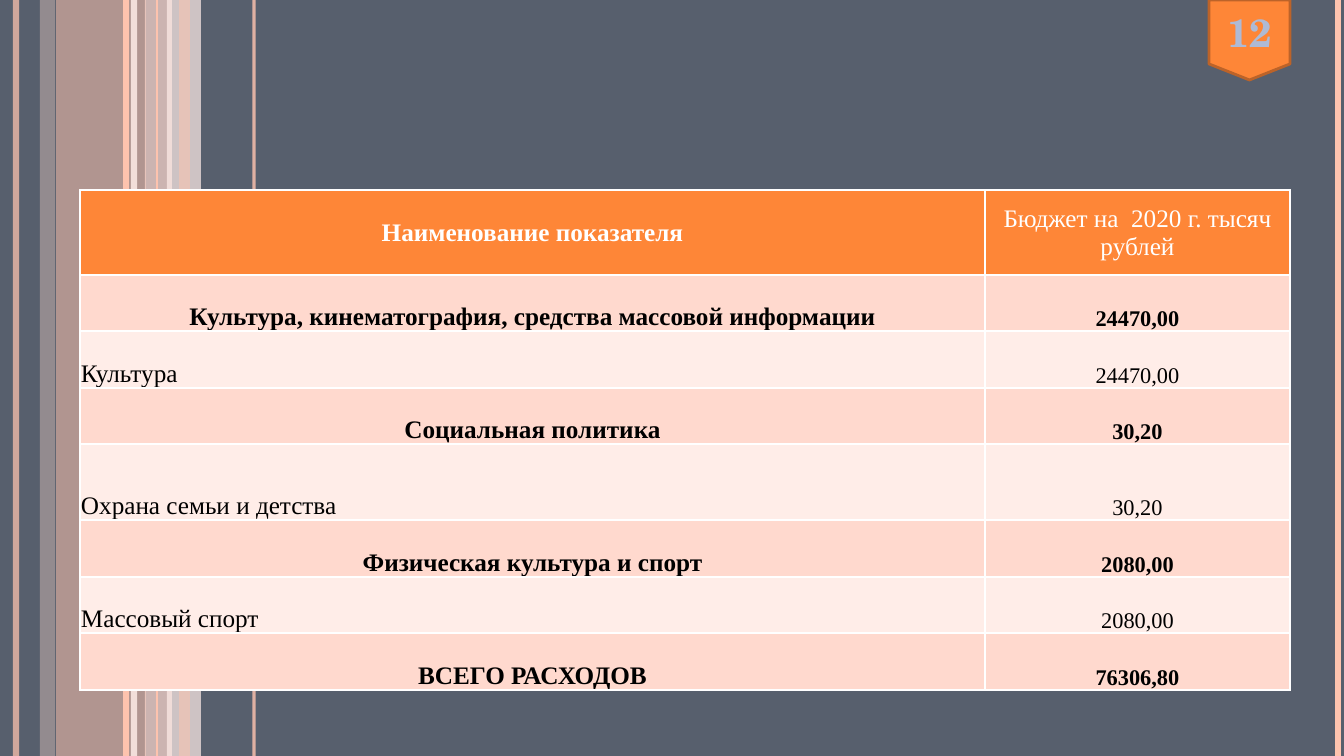
import pptx
import pptx.util
import pptx.dml.color
import pptx.enum.shapes
import pptx.enum.text
import pptx.oxml
import pptx.oxml.ns

# Content: lengths in px, line widths in points, opacity in percent
W, H = 1344, 756
EMU_PER_PX = 914400 / 100.8
BACKGROUND, ORANGE, PINK, PALE = "575F6D", "FE8637", "FFD9CE", "FFEDE8"
STRIPE = "FEC3AE"
SERIF = "Times New Roman"

# kind, x, width, colour, opacity; from back to front
STRIPES = [
    ("bar", 56, 90, STRIPE, 54),
    ("bar", 40, 15, PINK, 36),
    ("bar", 145, 27, PINK, 70),
    ("bar", 167, 34, PALE, 71),
    ("line", 16, 4.5, STRIPE, 73),
    ("line", 134, 4.5, PALE, 83),
    ("line", 126, 4.5, STRIPE, 100),
    ("line", 254, 2.25, STRIPE, 82),
    ("line", 157, 0.75, STRIPE, 100),
    ("bar", 179, 11, STRIPE, 51),
    ("line", 1338, 4.5, STRIPE, 100),
]
PAGE_NUMBER = "12"
HEADER = ("Наименование показателя", "Бюджет на  2020 г. тысяч рублей")
HEADER_HEIGHT = 85
# name, amount, is a section total, row height
BUDGET = [
    ("Культура, кинематография, средства массовой информации", "24470,00", True, 56),
    ("Культура", "24470,00", False, 57),
    ("Социальная политика", "30,20", True, 56),
    ("Охрана семьи и детства", "30,20", False, 76),
    ("Физическая культура и спорт", "2080,00", True, 57),
    ("Массовый спорт", "2080,00", False, 56),
    ("ВСЕГО РАСХОДОВ", "76306,80", True, 57),
]
TABLE_X, TABLE_Y = 80, 190
COLUMNS = (905, 305)

ALIGN = pptx.enum.text.PP_ALIGN
ANCHOR = pptx.enum.text.MSO_ANCHOR
SHAPE = pptx.enum.shapes.MSO_SHAPE


def px(n):
    return pptx.util.Emu(round(n * EMU_PER_PX))


def rgb(color):
    return pptx.dml.color.RGBColor.from_string(color)


def paint(fill, color):
    fill.solid()
    fill.fore_color.rgb = rgb(color)


def set_opacity(sp, percent):
    color = sp._element.spPr.find(".//" + pptx.oxml.ns.qn("a:srgbClr"))
    color.append(pptx.oxml.parse_xml(
        f'<a:alpha {pptx.oxml.ns.nsdecls("a")} val="{percent * 1000}"/>'))


def format_text(tf, size, color, bold, align, font=SERIF):
    p = tf.paragraphs[0]
    p.alignment = align
    f = p.runs[0].font
    f.name, f.size, f.bold = font, pptx.util.Pt(size), bold
    f.color.rgb = rgb(color)


def add_borders(cell):
    tcPr = cell._tc.get_or_add_tcPr()
    for i, side in enumerate(("lnL", "lnR", "lnT", "lnB")):
        tcPr.insert(i, pptx.oxml.parse_xml(
            f'<a:{side} {pptx.oxml.ns.nsdecls("a")} w="12700"><a:solidFill>'
            f'<a:srgbClr val="FFFFFF"/></a:solidFill></a:{side}>'))


def fill_cell(cell, text, fill, size, color, bold, align, anchor, tight=True):
    cell.text_frame.text = text
    format_text(cell.text_frame, size, color, bold, align)
    cell.vertical_anchor = anchor
    if tight:
        cell.margin_left = cell.margin_right = cell.margin_top = px(1)
        cell.margin_bottom = 0
    paint(cell.fill, fill)
    add_borders(cell)


prs = pptx.Presentation()
prs.slide_width, prs.slide_height = px(W), px(H)
slide = prs.slides.add_slide(prs.slide_layouts[6])
paint(slide.background.fill, BACKGROUND)

# Vertical stripes
for kind, x, width, color, opacity in STRIPES:
    if kind == "bar":
        sp = slide.shapes.add_shape(SHAPE.RECTANGLE, px(x), 0, px(width), px(H))
        sp.shadow.inherit = False
        paint(sp.fill, color)
        sp.line.fill.background()
    else:
        sp = slide.shapes.add_connector(
            pptx.enum.shapes.MSO_CONNECTOR.STRAIGHT, px(x), 0, px(x), px(H))
        sp.line.width = pptx.util.Pt(width)
        sp.line.color.rgb = rgb(color)
        sp._element.spPr.append(pptx.oxml.parse_xml(
            f'<a:effectLst {pptx.oxml.ns.nsdecls("a")}/>'))
    if opacity < 100:
        set_opacity(sp, opacity)

# Page number tag
tag = slide.shapes.add_shape(
    SHAPE.FLOWCHART_OFFPAGE_CONNECTOR, px(1209), 0, px(81), px(80))
tag.shadow.inherit = False
paint(tag.fill, ORANGE)
tag.line.color.rgb = rgb("BC6329")
tag.line.width = pptx.util.Pt(2)
tag.text_frame.text = PAGE_NUMBER
tag.text_frame.vertical_anchor = ANCHOR.MIDDLE
format_text(tag.text_frame, 28, "AEBAD5", True, ALIGN.CENTER, "TeX Gyre Schola")

# Budget table
heights = [HEADER_HEIGHT] + [row[3] for row in BUDGET]
table = slide.shapes.add_table(
    len(heights), len(COLUMNS), px(TABLE_X), px(TABLE_Y),
    px(sum(COLUMNS)), px(sum(heights))).table
for column, width in zip(table.columns, COLUMNS):
    column.width = px(width)
for row, height in zip(table.rows, heights):
    row.height = px(height)

for c, text in enumerate(HEADER):
    fill_cell(table.cell(0, c), text, ORANGE, 18, "FFFFFF", c == 0,
              ALIGN.CENTER, ANCHOR.MIDDLE, tight=c == 1)
for r, (name, amount, total, _) in enumerate(BUDGET, 1):
    fill = PINK if total else PALE
    name_align = ALIGN.CENTER if total else ALIGN.LEFT
    fill_cell(table.cell(r, 0), name, fill, 18, "000000", total,
              name_align, ANCHOR.BOTTOM)
    fill_cell(table.cell(r, 1), amount, fill, 16, "000000", total,
              ALIGN.CENTER, ANCHOR.BOTTOM)

prs.save("out.pptx")
